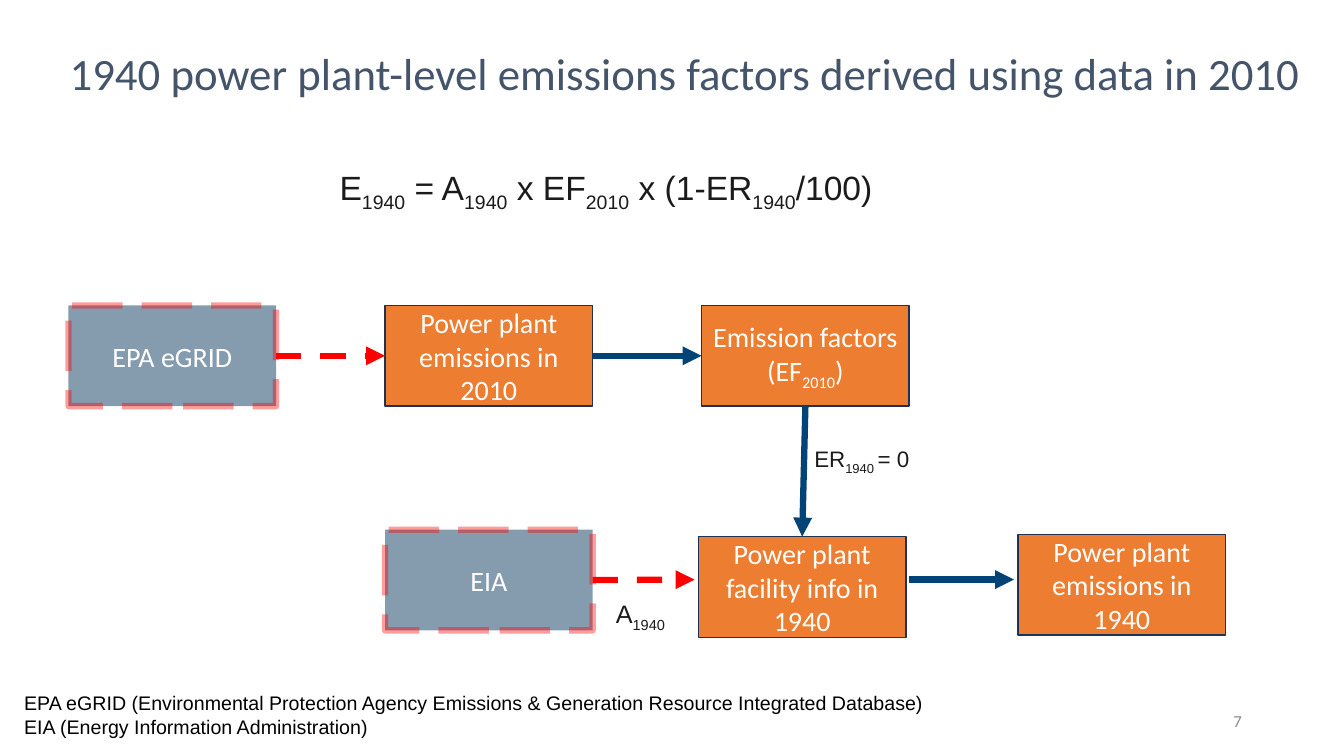
from pptx import Presentation
from pptx.dml.color import RGBColor as Color
from pptx.enum.dml import MSO_LINE_DASH_STYLE as Dash
from pptx.enum.shapes import MSO_CONNECTOR as Connector, MSO_SHAPE as Shape
from pptx.enum.text import MSO_ANCHOR as Anchor, MSO_AUTO_SIZE as AutoSize, PP_ALIGN as Align
from pptx.oxml.ns import qn
from pptx.util import Inches, Pt
from lxml.etree import SubElement

# Colours, fonts and type sizes
theme = {
    "title": {"name": "Calibri", "size": Pt(32), "color": "44546A"},
    "formula": {"name": "Arial", "size": Pt(24), "color": "1B1B1B"},
    "step": {"name": "Calibri", "size": Pt(20), "color": "FFFFFF"},
    "activity": {"name": "Arial", "size": Pt(18), "color": "1B1B1B"},
    "reduction": {"name": "Arial", "size": Pt(16), "color": "1B1B1B"},
    "note": {"name": "Arial", "size": Pt(14), "color": "000000"},
    "number": {"name": "Calibri", "size": Pt(12), "color": "8C8C8C"},
    "source box": {"fill": "003057", "line": "FF0000", "width": Pt(4.5), "dash": Dash.LONG_DASH},
    "result box": {"fill": "ED7D31", "line": "1E3256", "width": Pt(1), "dash": None},
    "source arrow": {"line": "FF0000", "dash": Dash.DASH},
    "result arrow": {"line": "004376", "dash": None},
}

deck = Presentation()
deck.slide_width, deck.slide_height = Inches(13.333), Inches(7.5)
page = deck.slides.add_slide(deck.slide_layouts[5])


def place(*shares):
    """Turn percentages of width and height, in turn, into lengths."""
    sides = (deck.slide_width, deck.slide_height) * 2
    return [round(side * share / 100) for side, share in zip(sides, shares)]


def write(frame, text, style, align=Align.LEFT, anchor=Anchor.TOP, fit=AutoSize.NONE):
    """Fill a frame; words between underscores become subscripts."""
    frame.word_wrap, frame.auto_size, frame.vertical_anchor = True, fit, anchor
    for index, line in enumerate(text.split("\n")):
        para = frame.add_paragraph() if index else frame.paragraphs[0]
        para.alignment = align
        for order, words in enumerate(line.split("_")):
            if not words:
                continue
            span = para.add_run()
            span.text = words
            for name, value in theme[style].items():
                if name == "color":
                    span.font.color.rgb = Color.from_string(value)
                else:
                    setattr(span.font, name, value)
            if order % 2:
                span.font._element.set("baseline", "-25000")


# Title
title = page.shapes.title
title.left, title.top, title.width, title.height = place(4.43, 6.13, 93.15, 19.47)
write(title.text_frame, "1940 power plant-level emissions factors derived using data in 2010", "title")
title.text_frame.paragraphs[0].line_spacing = 0.9

# Flow boxes on a grid of columns and rows
first_column, column_step, box_width = 5.1, 23.55, 15.45
first_row, row_step, box_height = 40.4, 30.27, 13.33
steps = [
    ("egrid", "EPA eGRID", "source box", 0, 0),
    ("plants 2010", "Power plant emissions in 2010", "result box", 1, 0),
    ("factors", "Emission factors (EF_2010_)", "result box", 2, 0),
    ("eia", "EIA", "source box", 1, 0.98),
    ("facility", "Power plant facility info in 1940", "result box", 1.99, 1.01),
    ("plants 1940", "Power plant emissions in 1940", "result box", 3, 1),
]
boxes = {}
for key, text, style, column, row in steps:
    look = theme[style]
    box = page.shapes.add_shape(Shape.RECTANGLE, *place(
        first_column + column * column_step, first_row + row * row_step, box_width, box_height))
    box.shadow.inherit = False
    box.fill.solid()
    box.fill.fore_color.rgb = Color.from_string(look["fill"])
    box.line.color.rgb = Color.from_string(look["line"])
    box.line.width, box.line.dash_style = look["width"], look["dash"]
    if style == "source box":
        for color, alpha in zip(box._element.spPr.iter(qn("a:srgbClr")), ("48000", "39000")):
            SubElement(color, qn("a:alpha")).set("val", alpha)
    write(box.text_frame, text, "step", Align.CENTER, Anchor.MIDDLE)
    boxes[key] = box

# Arrows: each end is a box with a side, or a free point
top, left, bottom, right = range(4)
arrows = [
    ("source arrow", ("egrid", right), ("plants 2010", left)),
    ("result arrow", ("plants 2010", right), ("factors", left)),
    ("result arrow", ("factors", bottom), ("facility", top)),
    ("source arrow", ("eia", right), (51.68, 76.67)),
    ("result arrow", (67.65, 76.67), (75.45, 76.67)),
]
for style, start, end in arrows:
    points = [place(*point) if point[0] not in boxes else (0, 0) for point in (start, end)]
    arrow = page.shapes.add_connector(Connector.STRAIGHT, *points[0], *points[1])
    for join, (key, side) in ((arrow.begin_connect, start), (arrow.end_connect, end)):
        if key in boxes:
            join(boxes[key], side)
    arrow.line.color.rgb = Color.from_string(theme[style]["line"])
    arrow.line.width, arrow.line.dash_style = Pt(4.5), theme[style]["dash"]
    SubElement(arrow.line._get_or_add_ln(), qn("a:tailEnd")).set("type", "triangle")
    SubElement(arrow._element.spPr, qn("a:effectLst"))

# Formula, arrow labels and footnote
notes = [
    ("E_1940_ = A_1940_ x EF_2010_ x (1-ER_1940_/100)", "formula", (24.53, 21.47, 55.2, 6.67)),
    ("ER_1940 _= 0", "reduction", (59.85, 58.27, 10.8, 4.93)),
    ("A_1940_", "activity", (45.08, 78.53, 5.93, 5.33)),
    ("EPA eGRID (Environmental Protection Agency Emissions & Generation Resource Integrated Database)\n"
     "EIA (Energy Information Administration)", "note", (1.05, 90.8, 71.03, 7.6)),
]
for text, style, shares in notes:
    box = page.shapes.add_textbox(*place(*shares))
    write(box.text_frame, text, style, fit=AutoSize.SHAPE_TO_FIT_TEXT)

# Page number
number = page.shapes.add_textbox(*place(70.65, 92.67, 22.5, 5.33))
write(number.text_frame, "7", "number", Align.RIGHT, Anchor.MIDDLE)

deck.save("out.pptx")
